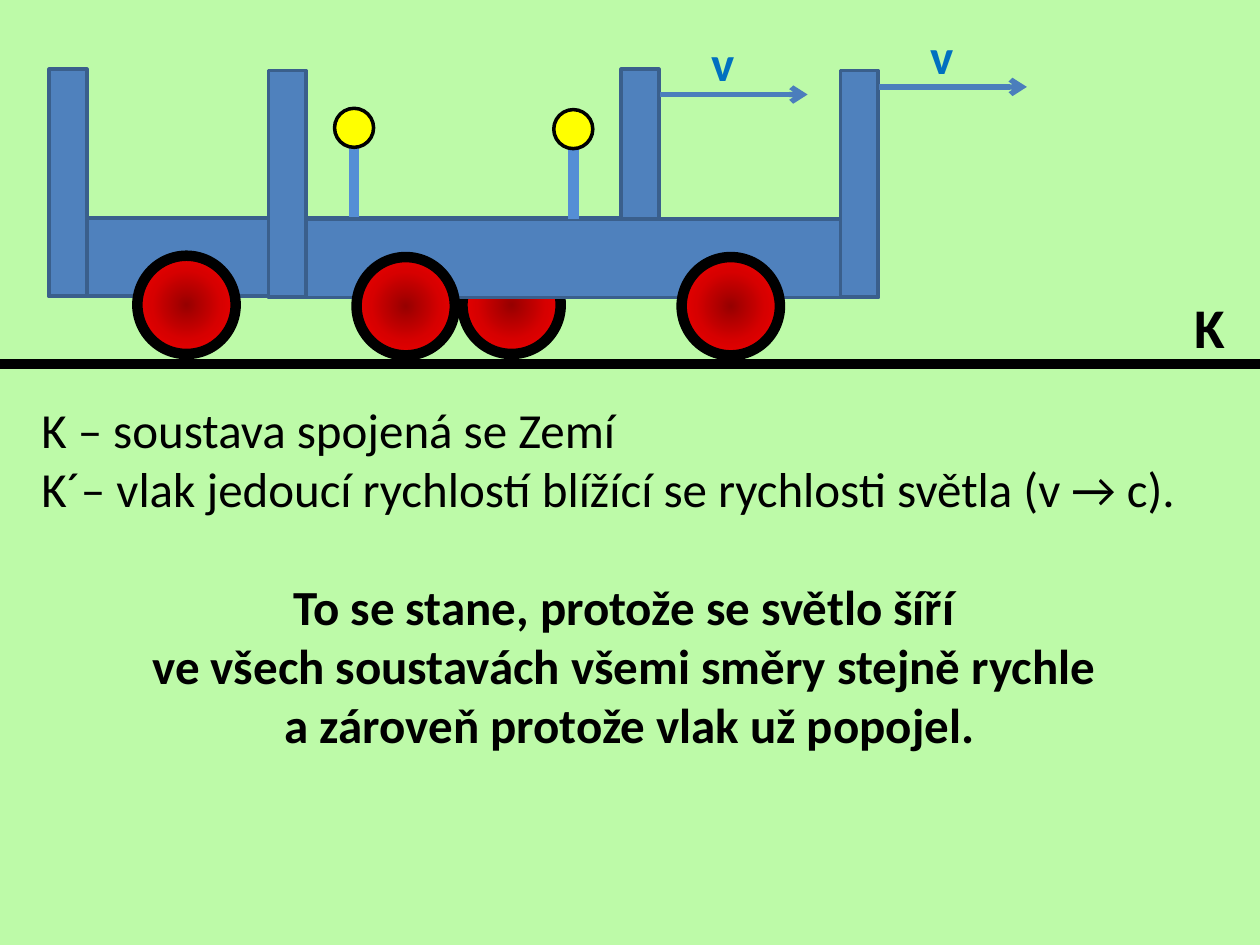
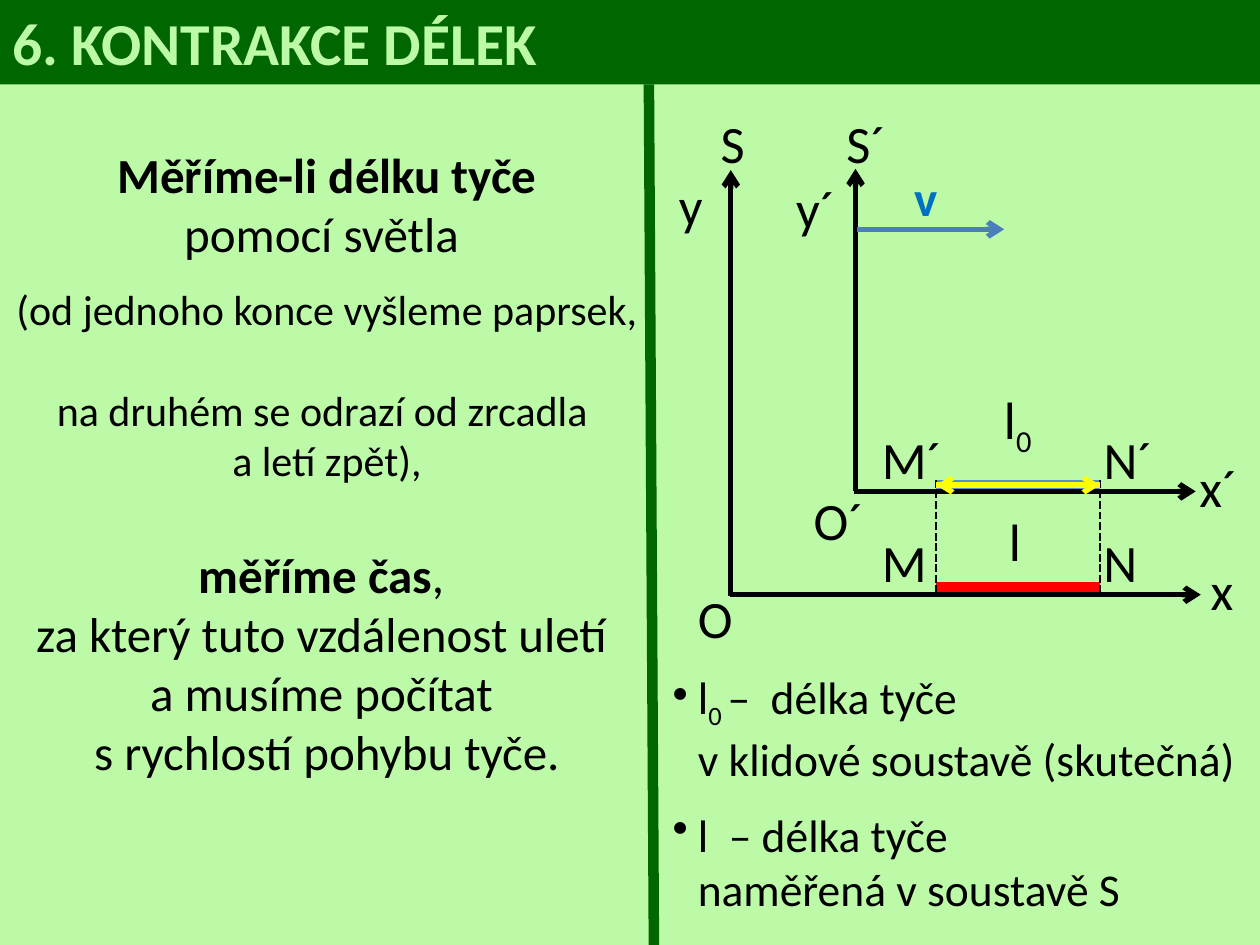
from dataclasses import dataclass
from lxml.etree import SubElement
from pptx import Presentation
from pptx.dml.color import RGBColor
from pptx.enum.dml import MSO_LINE
from pptx.enum.shapes import MSO_CONNECTOR, MSO_SHAPE
from pptx.enum.text import MSO_ANCHOR, PP_ALIGN
from pptx.oxml import parse_xml
from pptx.oxml.ns import nsdecls, qn
from pptx.util import Inches, Pt


@dataclass(frozen=True)
class Theme:
    font: str = "Calibri"
    background: str = "BDFAA8"
    dark_green: str = "006600"
    black: str = "000000"
    wagon: str = "4F81BD"
    wagon_edge: str = "3A5F8C"
    rod: str = "558ED5"
    arrow: str = "4B7EBC"
    velocity: str = "0070C0"
    yellow: str = "FFFF00"
    red: str = "FF0000"
    wheel: tuple = ((0, "970000"), (50, "D70000"), (100, "FF0000"))
    title: int = 34
    system: int = 32
    label: int = 30
    body: int = 28
    legend: int = 26
    detail: int = 24
    thick: float = 6
    medium: float = 3
    edge: float = 2
    thin: float = 1.5


THEME = Theme()

BOLD, PLAIN, SUBSCRIPT = "bold", "plain", "subscript"

TRAIN_TEXT = [
    dict(runs=[("K – soustava spojená se Zemí", PLAIN)]),
    dict(runs=[("K´– vlak jedoucí rychlostí blížící se rychlosti světla (v → c).", PLAIN)]),
    dict(runs=[("To se stane, protože se světlo šíří \n"
                "ve všech soustavách všemi směry stejně rychle \n"
                "a zároveň protože vlak už popojel.", BOLD)],
         centered=True, before=34),
]

WAGONS = [(0.39, 0.55), (2.13, 0.56)]
WAGON_ARROWS = [(6.98, 0.69), (5.24, 0.75)]

TITLE = "6. KONTRAKCE DÉLEK"

MEASURING_TEXT = [
    dict(runs=[(" Měříme-li délku tyče \n", BOLD), ("pomocí světla ", PLAIN)], centered=True),
    dict(runs=[("(od jednoho konce vyšleme paprsek,", PLAIN)],
         centered=True, before=12, size=THEME.detail),
    dict(runs=[("na druhém se odrazí od zrcadla \na letí zpět),", PLAIN)],
         centered=True, before=29, size=THEME.detail),
    dict(runs=[("měříme čas", BOLD),
               (", \nza který tuto vzdálenost uletí \na musíme počítat \n"
                "s rychlostí pohybu tyče.", PLAIN)],
         centered=True, before=34),
]

LEGEND_TEXT = [
    dict(runs=[("l", PLAIN), ("0 ", SUBSCRIPT),
               ("–  délka tyče \nv klidové soustavě (skutečná)", PLAIN)],
         bullet=True, size=THEME.legend),
    dict(runs=[("l  – délka tyče \nnaměřená v soustavě S", PLAIN)],
         bullet=True, before=12, size=THEME.legend),
]

AXES = [
    ((5.79, 4.72), (9.53, 4.72)),
    ((5.8, 4.73), (5.8, 1.35)),
    ((6.79, 3.9), (6.79, 1.34)),
    ((6.78, 3.9), (9.49, 3.9)),
]
ROD_LEFT, ROD_RIGHT = 7.43, 8.73
MOVING_ROD_Y, MEASURED_ROD_Y = 3.85, 4.66

DIAGRAM_LABELS = [
    ("S", 5.62, 0.83, 0.39),
    ("y", 5.29, 1.32, 0.49),
    ("O", 5.44, 4.6, 0.43),
    ("x", 9.51, 4.38, 0.49),
    ("M", 6.9, 4.16, 0.56),
    ("N", 8.66, 4.16, 0.47),
    ("l", 7.91, 3.99, 0.3),
    ("S´", 6.62, 0.83, 0.53),
    ("y´", 6.22, 1.35, 0.63),
    ("O´", 6.36, 3.82, 0.63),
    ("x´", 9.42, 3.56, 0.62),
    ("M´", 6.9, 3.34, 0.7),
    ("N´", 8.66, 3.34, 0.61),
]


def color(value):
    return RGBColor.from_string(value)


def style_run(run, size, ink, style):
    font = run.font
    font.name, font.size, font.bold = THEME.font, Pt(size), style == BOLD
    font.color.rgb = color(ink)
    if style == SUBSCRIPT:
        run._r.get_or_add_rPr().set("baseline", "-25000")


def fill_paragraph(paragraph, runs, size=THEME.body, ink=THEME.black,
                   centered=False, before=0, bullet=False):
    paragraph.alignment = PP_ALIGN.CENTER if centered else PP_ALIGN.LEFT
    paragraph.space_before = Pt(before)
    if bullet:
        properties = paragraph._p.get_or_add_pPr()
        properties.set("marL", str(Inches(0.2)))
        properties.set("indent", str(Inches(-0.2)))
        SubElement(properties, qn("a:buChar")).set("char", "•")
    for text, style in runs:
        for index, line in enumerate(text.split("\n")):
            if index:
                paragraph.add_line_break()
            if line:
                run = paragraph.add_run()
                run.text = line
                style_run(run, size, ink, style)


def add_text(slide, left, top, width, height, paragraphs):
    box = slide.shapes.add_textbox(Inches(left), Inches(top), Inches(width), Inches(height))
    frame = box.text_frame
    frame.word_wrap = True
    for index, content in enumerate(paragraphs):
        paragraph = frame.add_paragraph() if index else frame.paragraphs[0]
        fill_paragraph(paragraph, **content)
    return box


def add_label(slide, runs, left, top, width, size=THEME.label, ink=THEME.black):
    height = size * 1.22 / 72 + 0.1
    box = add_text(slide, left, top, width, height, [dict(runs=runs, size=size, ink=ink)])
    box.text_frame.margin_right = 0


def add_line(slide, start, end, ink, weight, arrow=False, dashed=False):
    points = [Inches(value) for value in (*start, *end)]
    connector = slide.shapes.add_connector(MSO_CONNECTOR.STRAIGHT, *points)
    connector.line.color.rgb = color(ink)
    connector.line.width = Pt(weight)
    if dashed:
        connector.line.dash_style = MSO_LINE.SQUARE_DOT
    if arrow:
        SubElement(connector.line._get_or_add_ln(), qn("a:tailEnd")).set("type", "arrow")
    SubElement(connector._element.spPr, qn("a:effectLst"))
    return connector


def add_shape(slide, kind, left, top, width, height, fill, edge=None, weight=THEME.edge):
    shape = slide.shapes.add_shape(
        kind, Inches(left), Inches(top), Inches(width), Inches(height))
    shape.shadow.inherit = False
    shape.fill.solid()
    shape.fill.fore_color.rgb = color(fill)
    if edge:
        shape.line.color.rgb = color(edge)
        shape.line.width = Pt(weight)
    else:
        shape.line.fill.background()
    return shape


def add_wheel(slide, left, top):
    wheel = add_shape(slide, MSO_SHAPE.OVAL, left, top, 0.78, 0.78,
                      THEME.red, THEME.black, THEME.thick)
    stops = "".join(f'<a:gs pos="{position * 1000}"><a:srgbClr val="{value}"/></a:gs>'
                    for position, value in THEME.wheel)
    gradient = parse_xml(
        f'<a:gradFill {nsdecls("a")} rotWithShape="1"><a:gsLst>{stops}</a:gsLst>'
        '<a:path path="circle"><a:fillToRect l="50000" t="50000" r="50000" b="50000"/>'
        '</a:path></a:gradFill>')
    properties = wheel._element.spPr
    properties.replace(properties.find(qn("a:solidFill")), gradient)


def add_wagon(slide, left, top):
    body_top, middle = top + 1.18, left + 2.42
    body = add_shape(slide, MSO_SHAPE.RECTANGLE, left, body_top, 4.84, 0.62,
                     THEME.wagon, THEME.wagon_edge)
    for wall_left in (left, left + 4.54):
        add_shape(slide, MSO_SHAPE.RECTANGLE, wall_left, top, 0.3, 1.8,
                  THEME.wagon, THEME.wagon_edge)
    for wheel_offset in (0.7, 3.28):
        add_wheel(slide, left + wheel_offset, top + 1.48)
    post = add_line(slide, (middle, body_top), (middle, top + 0.62), THEME.rod, THEME.thick)
    post.begin_connect(body, 0)
    add_shape(slide, MSO_SHAPE.OVAL, middle - 0.155, top + 0.31, 0.31, 0.31,
              THEME.yellow, THEME.black)


def add_velocity(slide, left, top, label_offset=0.31):
    add_line(slide, (left, top), (left + 1.17, top), THEME.arrow, THEME.medium, arrow=True)
    add_label(slide, [("v", BOLD)], left + label_offset, top - 0.54, 0.55,
              THEME.body, THEME.velocity)


def add_slide(presentation):
    slide = presentation.slides.add_slide(presentation.slide_layouts[6])
    slide.background.fill.solid()
    slide.background.fill.fore_color.rgb = color(THEME.background)
    return slide


def build_train(presentation):
    slide = add_slide(presentation)
    add_text(slide, 0.23, 3.12, 9.53, 3.67, TRAIN_TEXT)
    add_line(slide, (0, 2.89), (10, 2.89), THEME.black, THEME.thick)
    add_label(slide, [("K", BOLD)], 9.38, 2.27, 0.45, THEME.system)
    for wagon in WAGONS:
        add_wagon(slide, *wagon)
    for arrow in WAGON_ARROWS:
        add_velocity(slide, *arrow)


def build_contraction(presentation):
    slide = add_slide(presentation)
    add_text(slide, 5.24, 5.26, 5.1, 2.01, LEGEND_TEXT)
    band = add_shape(slide, MSO_SHAPE.RECTANGLE, 0, 0, 10, 0.67, THEME.dark_green)
    band.text_frame.vertical_anchor = MSO_ANCHOR.MIDDLE
    fill_paragraph(band.text_frame.paragraphs[0], [(TITLE, BOLD)],
                   THEME.title, THEME.background)
    add_text(slide, 0, 1.1, 5.19, 6.24, MEASURING_TEXT)

    rod_start, rod_end = (ROD_LEFT, MOVING_ROD_Y), (ROD_RIGHT, MOVING_ROD_Y)
    add_line(slide, rod_start, rod_end, THEME.rod, THEME.thick)
    add_line(slide, (5.15, 0.67), (5.19, 7.5), THEME.dark_green, THEME.thick)
    for start, end in AXES:
        add_line(slide, start, end, THEME.black, THEME.medium, arrow=True)
    add_velocity(slide, 6.8, 1.82, 0.36)
    for text, left, top, width in DIAGRAM_LABELS:
        add_label(slide, [(text, PLAIN)], left, top, width)
    add_label(slide, [("l", PLAIN), ("0", SUBSCRIPT)], 7.87, 3.02, 0.44)

    add_line(slide, (ROD_LEFT, MEASURED_ROD_Y), (ROD_RIGHT, MEASURED_ROD_Y),
             THEME.red, THEME.thick)
    for x in (ROD_RIGHT, ROD_LEFT):
        add_line(slide, (x, 3.81), (x, 4.72), THEME.black, THEME.thin, dashed=True)
    for start, end in ((rod_start, rod_end), (rod_end, rod_start)):
        add_line(slide, start, end, THEME.yellow, THEME.medium, arrow=True)


def main():
    presentation = Presentation()
    presentation.slide_width, presentation.slide_height = Inches(10), Inches(7.5)
    build_train(presentation)
    build_contraction(presentation)
    presentation.save("out.pptx")


if __name__ == "__main__":
    main()
